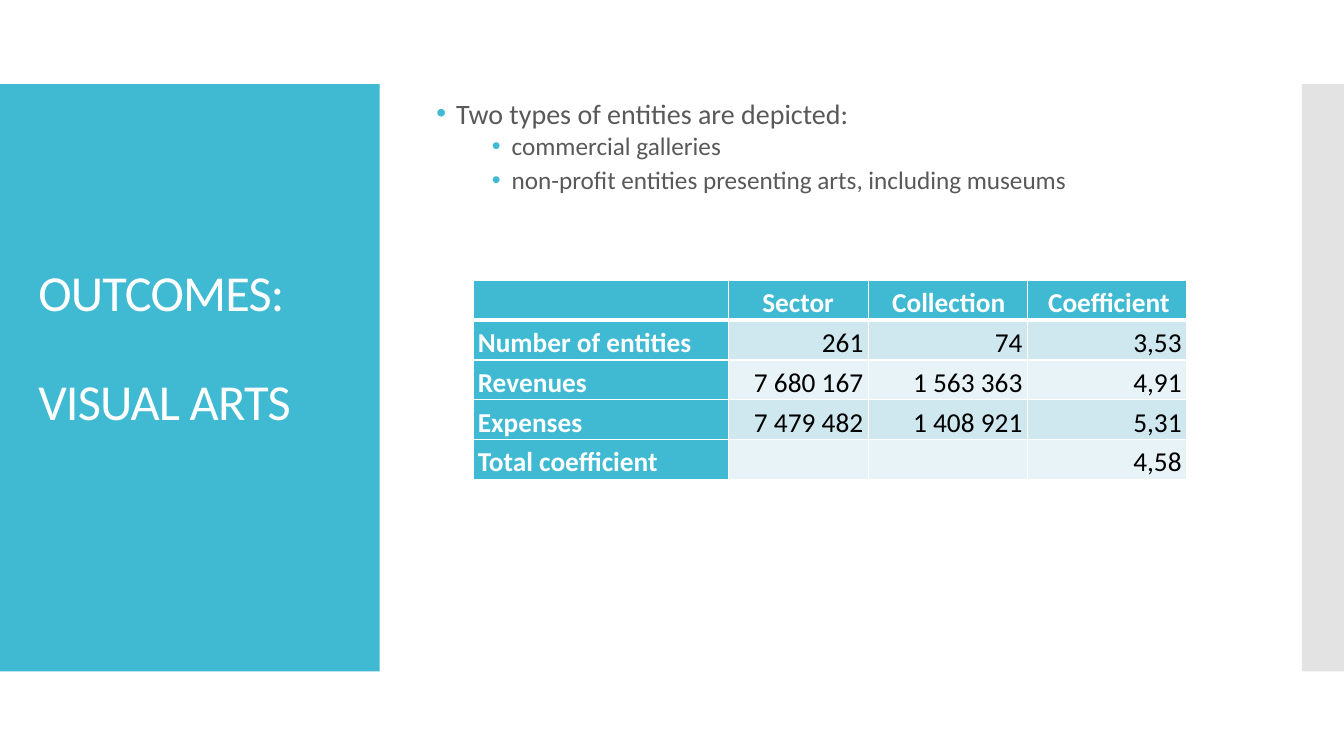
from lxml import etree
from pptx import Presentation
from pptx import util as u
from pptx.dml.color import RGBColor
from pptx.enum import shapes, text
from pptx.oxml.ns import qn

TEAL = RGBColor(0x40, 0xBA, 0xD2)
SILVER = RGBColor(0xC8, 0xC8, 0xC8)
SLATE = RGBColor(0x59, 0x59, 0x59)
WHITE = RGBColor(0xFF, 0xFF, 0xFF)
BLACK = RGBColor(0x00, 0x00, 0x00)
BANDS = [RGBColor(0xCF, 0xE7, 0xEE), RGBColor(0xE8, 0xF3, 0xF7)]

ENTITIES = [
    (0, "Two types of entities are depicted:"),
    (1, "commercial galleries"),
    (1, "non-profit entities presenting arts, including museums"),
]
COEFFICIENTS = [
    ["", "Sector", "Collection", "Coefficient"],
    ["Number of entities", "261", "74", "3,53"],
    ["Revenues", "7 680 167", "1 563 363", "4,91"],
    ["Expenses", "7 479 482", "1 408 921", "5,31"],
    ["Total coefficient", "", "", "4,58"],
]


class SlideBuilder:
    font = "Calibri"

    def __init__(self, slide):
        self.slide = slide

    def place(self, item, left, top, width, height):
        item.left, item.top = u.Cm(left), u.Cm(top)
        item.width, item.height = u.Cm(width), u.Cm(height)

    def run(self, paragraph, words, size, color, bold=False):
        run = paragraph.add_run()
        run.text = words
        run.font.name, run.font.size = self.font, u.Pt(size)
        run.font.bold = bold
        run.font.color.rgb = color
        return run

    def panel(self, box, color, opacity=100):
        panel = self.slide.shapes.add_shape(
            shapes.MSO_SHAPE.RECTANGLE, *map(u.Cm, box))
        panel.shadow.inherit = False
        panel.line.fill.background()
        panel.fill.solid()
        panel.fill.fore_color.rgb = color
        if opacity < 100:
            tint = panel.fill._xPr.find(".//" + qn("a:srgbClr"))
            etree.SubElement(tint, qn("a:alpha"), val=str(opacity * 1000))
        self.slide.shapes._spTree.insert(2, panel._element)

    def title(self, box, lines):
        title = self.slide.shapes.title
        self.place(title, *box)
        frame = title.text_frame
        frame.auto_size = text.MSO_AUTO_SIZE.NONE
        frame.vertical_anchor = text.MSO_ANCHOR.MIDDLE
        frame.margin_bottom = u.Cm(1.52)
        for index, line in enumerate(lines):
            paragraph = frame.add_paragraph() if index else frame.paragraphs[0]
            paragraph.alignment = text.PP_ALIGN.LEFT
            paragraph.line_spacing = 0.9
            paragraph.space_before = u.Pt(39.5 if index else 0)
            run = self.run(paragraph, line, 36, WHITE)
            run.font._element.set("spc", "-60")

    def bullets(self, box, items):
        body = self.slide.placeholders[1]
        self.place(body, *box)
        frame = body.text_frame
        frame.auto_size = text.MSO_AUTO_SIZE.NONE
        for index, (level, words) in enumerate(items):
            paragraph = frame.add_paragraph() if index else frame.paragraphs[0]
            paragraph.level = level
            paragraph.line_spacing = 0.9
            paragraph.space_before = u.Pt(2.5 if level else 12)
            paragraph.space_after = u.Pt(2.5 if level else 0)
            props = paragraph._p.get_or_add_pPr()
            props.set("marL", str(u.Cm(1.9 if level else 0.5)))
            props.set("indent", str(u.Cm(-0.5)))
            bullet_color = etree.SubElement(props, qn("a:buClr"))
            etree.SubElement(bullet_color, qn("a:srgbClr"), val=str(TEAL))
            etree.SubElement(props, qn("a:buFont"), typeface="Arial")
            etree.SubElement(props, qn("a:buChar"), char="•")
            self.run(paragraph, words, 18 if level else 20, SLATE)

    def borders(self, cell, **widths):
        props = cell._tc.get_or_add_tcPr()
        for side, width in widths.items():
            line = etree.SubElement(props, qn("a:ln" + side), w=str(u.Pt(width)))
            fill = etree.SubElement(line, qn("a:solidFill"))
            etree.SubElement(fill, qn("a:srgbClr"), val=str(WHITE))

    def table(self, left, top, widths, row_height, rows):
        table = self.slide.shapes.add_table(
            len(rows), len(widths), u.Cm(left), u.Cm(top),
            u.Cm(sum(widths)), u.Cm(row_height * len(rows))).table
        table.first_col = True
        for column, width in zip(table.columns, widths):
            column.width = u.Cm(width)
        for r, values in enumerate(rows):
            table.rows[r].height = u.Cm(row_height)
            for c, value in enumerate(values):
                self.cell(table.cell(r, c), r, c, value, r == len(rows) - 1)

    def cell(self, cell, r, c, value, is_total):
        heading = r == 0 or c == 0
        self.borders(cell, L=1, R=1, T=3 if r == 1 else 1, B=3 if r == 0 else 1)
        cell.fill.solid()
        cell.fill.fore_color.rgb = TEAL if heading else BANDS[(r - 1) % 2]
        cell.margin_left = cell.margin_right = u.Cm(0.12)
        cell.margin_top, cell.margin_bottom = u.Cm(0.1), 0
        if is_total:
            cell.vertical_anchor = text.MSO_ANCHOR.BOTTOM
        if not value:
            return
        paragraph = cell.text_frame.paragraphs[0]
        paragraph.line_spacing = 1.07
        if r == 0:
            paragraph.alignment = text.PP_ALIGN.CENTER
            paragraph._p.get_or_add_pPr().set("marL", str(u.Cm(0.05 * (c - 1))))
        else:
            paragraph.alignment = text.PP_ALIGN.RIGHT if c else text.PP_ALIGN.LEFT
        self.run(paragraph, value, 19.5, WHITE if heading else BLACK, heading)


def main():
    deck = Presentation()
    deck.slide_width, deck.slide_height = u.Cm(33.87), u.Cm(19.05)
    builder = SlideBuilder(deck.slides.add_slide(deck.slide_layouts[1]))
    builder.panel((0, 2.12, 9.57, 14.8), TEAL)
    builder.panel((32.81, 2.12, 1.06, 14.8), SILVER, opacity=50)
    builder.title((0.71, 3.12, 8.18, 12.78), ["OUTCOMES:", "VISUAL ARTS"])
    builder.bullets((10.74, 2.39, 20.32, 14.22), ENTITIES)
    builder.table(11.92, 7.07, [6.43, 3.53, 4.01, 4.01], 1, COEFFICIENTS)
    deck.save("out.pptx")


if __name__ == "__main__":
    main()
